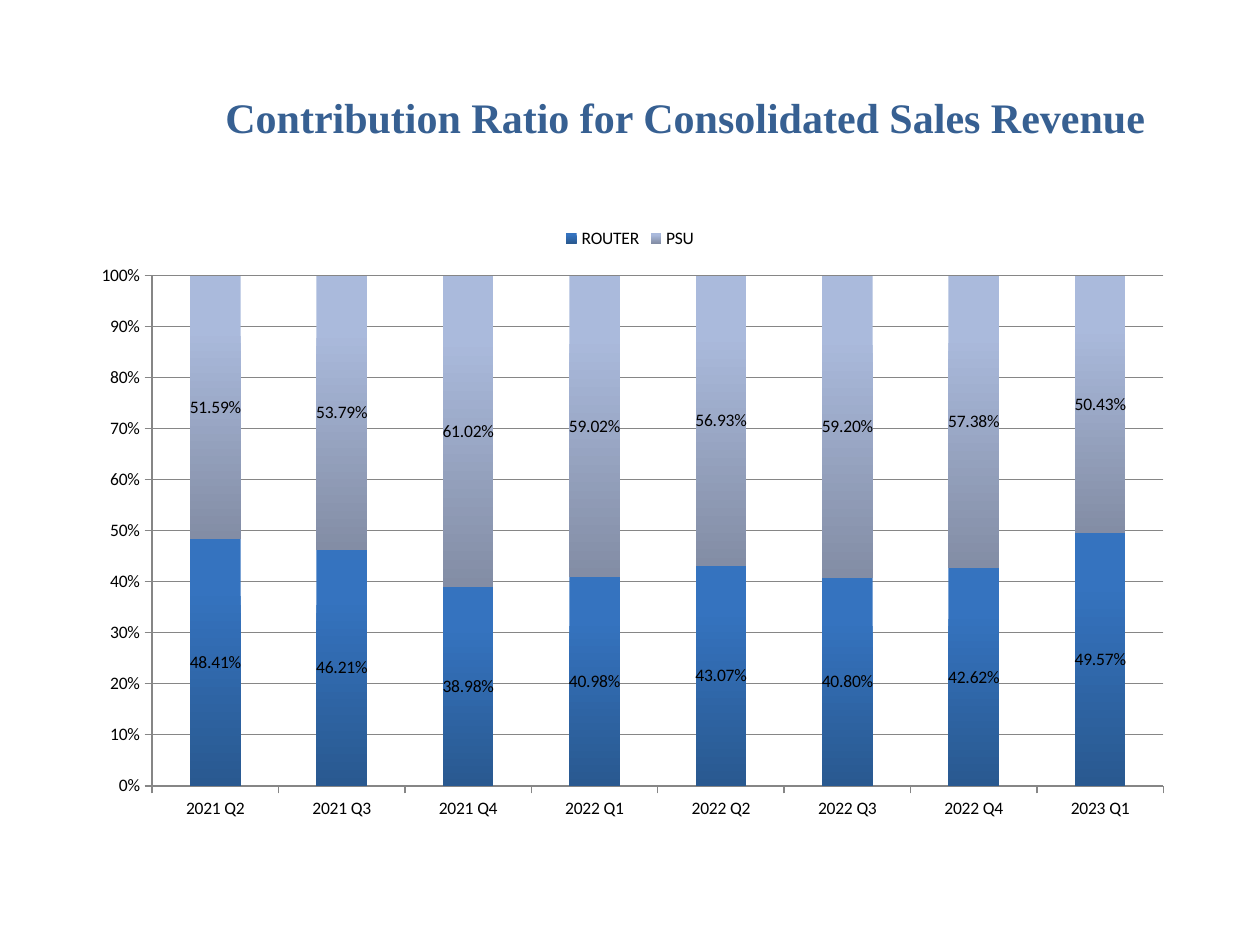
from lxml import etree
from pptx import Presentation
from pptx.chart.data import CategoryChartData
from pptx.dml.color import RGBColor
from pptx.enum.chart import XL_CHART_TYPE, XL_LEGEND_POSITION, XL_TICK_MARK
from pptx.oxml import parse_xml
from pptx.oxml.ns import nsdecls, qn
from pptx.util import Inches, Pt

STACKED = XL_CHART_TYPE.COLUMN_STACKED
TOP = XL_LEGEND_POSITION.TOP
OUT = XL_TICK_MARK.OUTSIDE
NONE = XL_TICK_MARK.NONE


def color(code):
    return RGBColor.from_string(code)


class Deck:
    title_font = "Times New Roman"
    chart_font = "Calibri"
    title_ink = "376092"
    ink = "000000"
    rule = "868686"

    def __init__(self, width, height):
        self.prs = Presentation()
        self.prs.slide_width = Inches(width)
        self.prs.slide_height = Inches(height)
        self.slide = self.prs.slides.add_slide(self.prs.slide_layouts[6])

    def title(self, text, *box):
        frame = self.slide.shapes.add_textbox(*map(Inches, box)).text_frame
        frame.word_wrap = True
        run = frame.paragraphs[0].add_run()
        run.text = text
        run.font.name = self.title_font
        run.font.size = Pt(24)
        run.font.bold = True
        run.font.color.rgb = color(self.title_ink)

    def line(self, fmt):
        fmt.line.color.rgb = color(self.rule)
        fmt.line.width = Pt(0.75)

    def shade(self, series, light, dark):
        fill = series.format.fill
        fill.gradient()
        fill.gradient_angle = 270
        for stop, code, pos in zip(fill.gradient_stops, (light, dark), (0.2, 1)):
            stop.color.rgb = color(code)
            stop.position = pos

    def place(self, chart, **area):
        """Fix the inner plot area as fractions of the chart."""
        plot = chart.element.find(".//" + qn("c:plotArea"))
        old = plot.find(qn("c:layout"))
        if old is not None:
            plot.remove(old)
        layout = parse_xml(f"<c:layout {nsdecls('c')}><c:manualLayout/></c:layout>")
        marks = {"layoutTarget": "inner", "xMode": "edge", "yMode": "edge", **area}
        for name, val in marks.items():
            etree.SubElement(layout[0], qn("c:" + name)).set("val", str(val))
        plot.insert(0, layout)

    def columns(self, cats, rows, tints, *box):
        data = CategoryChartData(number_format="0.00%")
        data.categories = cats
        for name, vals in rows.items():
            data.add_series(name, vals)
        frame = self.slide.shapes.add_chart(STACKED, *map(Inches, box), data)
        chart = frame.chart
        chart.has_title = False
        chart.font.name = self.chart_font
        chart.font.size = Pt(10)
        chart.font.color.rgb = color(self.ink)
        chart.has_legend = True
        chart.legend.position = TOP
        chart.legend.include_in_layout = False

        # Columns and their labels
        plot = chart.plots[0]
        plot.gap_width = 150
        plot.overlap = 100
        plot.vary_by_categories = False
        for series in plot.series:
            self.shade(series, *tints[series.name])
            labels = series.data_labels
            labels.show_value = True
            labels.number_format = "0.00%"
            labels.number_format_is_linked = False

        # Axes
        for axis in (chart.category_axis, chart.value_axis):
            axis.major_tick_mark = OUT
            axis.minor_tick_mark = NONE
            self.line(axis.format)
        scale = chart.value_axis
        scale.minimum_scale = 0
        scale.maximum_scale = 1
        scale.major_unit = 0.1
        scale.tick_labels.number_format = "0%"
        scale.tick_labels.number_format_is_linked = False
        scale.has_major_gridlines = True
        self.line(scale.major_gridlines.format)
        return chart

    def save(self):
        self.prs.save("out.pptx")


def main():
    deck = Deck(10, 7.5)

    # Heading
    deck.title("Contribution Ratio for Consolidated Sales Revenue",
               1.69, 0.68, 7.56, 1.18)

    # Share of revenue by quarter
    cats = ["2021 Q2", "2021 Q3", "2021 Q4", "2022 Q1",
            "2022 Q2", "2022 Q3", "2022 Q4", "2023 Q1"]
    rows = {
        "ROUTER": [0.4841, 0.4621, 0.3898, 0.4098, 0.4307, 0.4080, 0.4262, 0.4957],
        "PSU": [0.5159, 0.5379, 0.6102, 0.5902, 0.5693, 0.5920, 0.5738, 0.5043],
    }
    tints = {"ROUTER": ("3573BF", "295990"), "PSU": ("AABADC", "838DA5")}
    chart = deck.columns(cats, rows, tints, 0.59, 1.7, 8.82, 4.88)
    deck.place(chart, x=0.07, y=0.1, w=0.91, h=0.83)

    deck.save()


if __name__ == "__main__":
    main()
